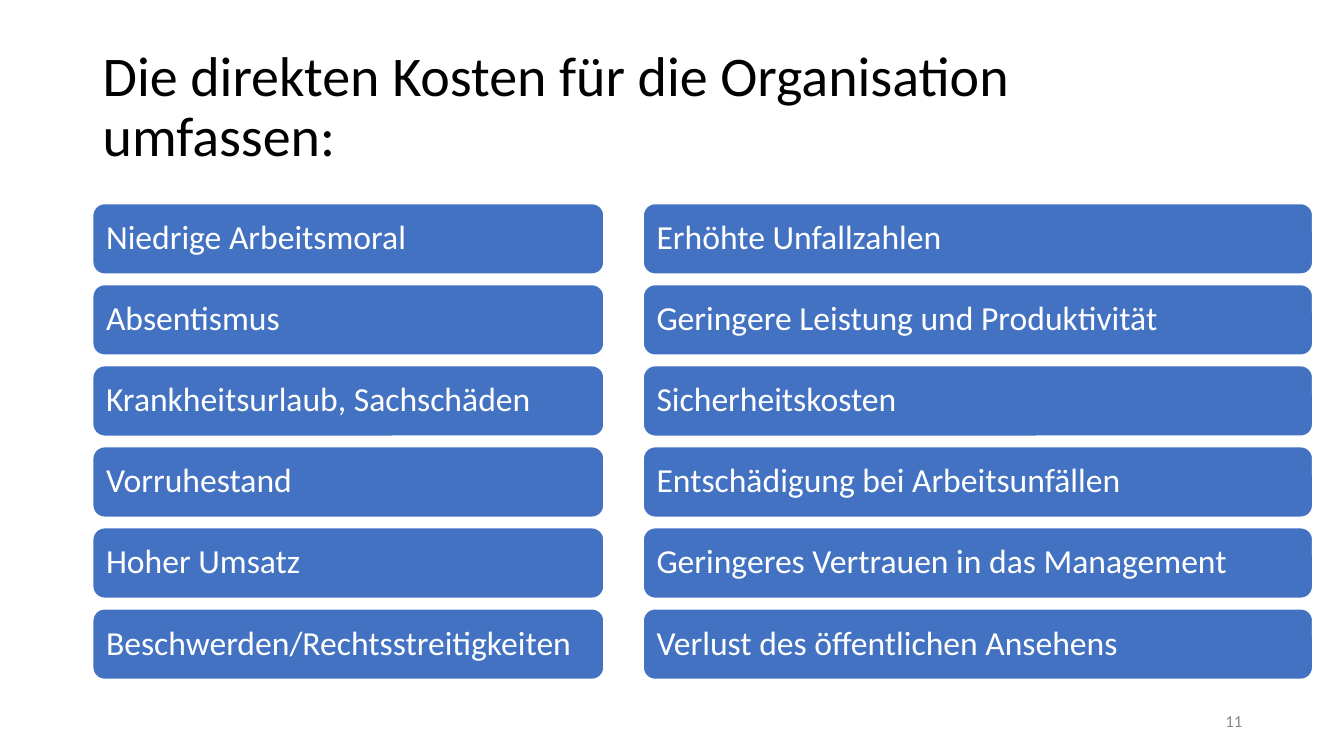
from dataclasses import dataclass

from pptx import Presentation
from pptx.dml.color import RGBColor
from pptx.enum.shapes import MSO_SHAPE as Shape
from pptx.enum.text import MSO_ANCHOR as Anchor, PP_ALIGN as Align
from pptx.slide import Slide
from pptx.text.text import TextFrame
from pptx.util import Inches, Pt


@dataclass(frozen=True)
class Theme:
    font: str = "Calibri"
    title_size: int = 40
    card_size: int = 24
    number_size: int = 12
    title: str = "000000"
    card: str = "4372C3"
    on_card: str = "FFFFFF"
    number: str = "888888"


@dataclass(frozen=True)
class Box:
    left: float
    top: float
    width: float
    height: float

    def emu(self) -> tuple[int, int, int, int]:
        return (Inches(self.left), Inches(self.top),
                Inches(self.width), Inches(self.height))


@dataclass(frozen=True)
class Text:
    words: str
    size: int
    color: str
    align: Align = Align.LEFT
    spacing: float = 0.9
    inset: float = 0.05


@dataclass(frozen=True)
class Column:
    left: float
    width: float
    costs: tuple[str, ...]


@dataclass(frozen=True)
class Rows:
    top: float
    bottom: float
    height: float
    count: int

    def y(self, row: int) -> float:
        pitch = (self.bottom - self.height - self.top) / (self.count - 1)
        return self.top + row * pitch


THEME = Theme()
MARGIN = 0.92
ROWS = Rows(top=2.02, bottom=6.74, height=0.7, count=6)
COLUMNS = (
    Column(MARGIN, 5.07, (
        "Niedrige Arbeitsmoral",
        "Absentismus",
        "Krankheitsurlaub, Sachschäden",
        "Vorruhestand",
        "Hoher Umsatz",
        "Beschwerden/Rechtsstreitigkeiten",
    )),
    Column(6.38, 6.64, (
        "Erhöhte Unfallzahlen",
        "Geringere Leistung und Produktivität",
        "Sicherheitskosten",
        "Entschädigung bei Arbeitsunfällen",
        "Geringeres Vertrauen in das Management",
        "Verlust des öffentlichen Ansehens",
    )),
)


def write(tf: TextFrame, text: Text) -> None:
    tf.word_wrap = True
    tf.vertical_anchor = Anchor.MIDDLE
    tf.margin_left = tf.margin_right = Inches(0.1)
    tf.margin_top = tf.margin_bottom = Inches(text.inset)
    p = tf.paragraphs[0]
    p.text = text.words
    p.alignment = text.align
    p.line_spacing = text.spacing
    p.font.name = THEME.font
    p.font.size = Pt(text.size)
    p.font.color.rgb = RGBColor.from_string(text.color)


def add_text(s: Slide, box: Box, text: Text) -> None:
    write(s.shapes.add_textbox(*box.emu()).text_frame, text)


def add_card(s: Slide, box: Box, words: str) -> None:
    sp = s.shapes.add_shape(Shape.ROUNDED_RECTANGLE, *box.emu())
    sp.shadow.inherit = False
    sp.fill.solid()
    sp.fill.fore_color.rgb = RGBColor.from_string(THEME.card)
    sp.line.color.rgb = RGBColor.from_string(THEME.on_card)
    sp.line.width = Pt(1)
    write(sp.text_frame, Text(words, THEME.card_size, THEME.on_card, inset=0.1))


def main() -> None:
    prs = Presentation()
    prs.slide_width, prs.slide_height = Inches(13.33), Inches(7.5)
    s = prs.slides.add_slide(prs.slide_layouts[6])

    add_text(s, Box(MARGIN, 0.35, 11.5, 1.45),
             Text("Die direkten Kosten für die Organisation umfassen:",
                  THEME.title_size, THEME.title))
    for column in COLUMNS:
        for row, cost in enumerate(column.costs):
            add_card(s, Box(column.left, ROWS.y(row), column.width, ROWS.height), cost)
    add_text(s, Box(9.42, 6.95, 3, 0.4),
             Text("11", THEME.number_size, THEME.number, Align.RIGHT, spacing=1.0))

    prs.save("out.pptx")


if __name__ == "__main__":
    main()
